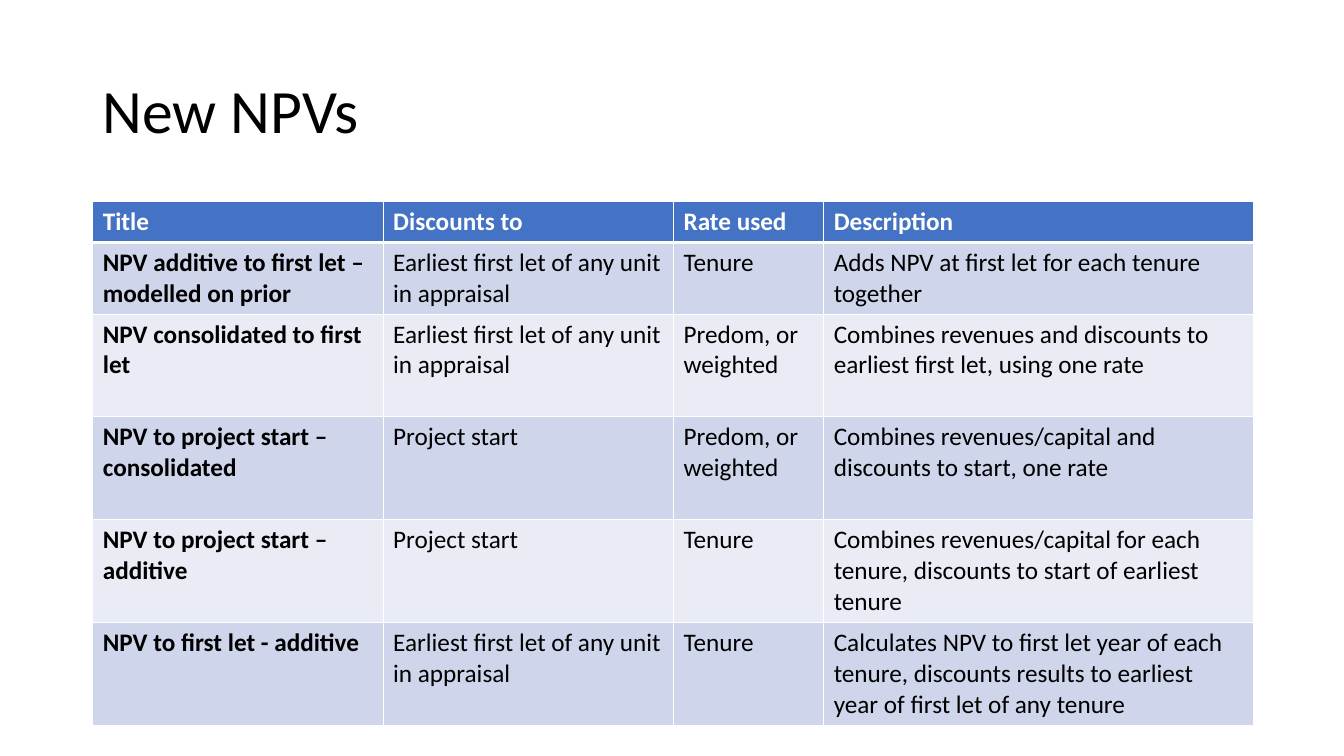
from dataclasses import dataclass

from lxml import etree
from pptx import Presentation
from pptx.dml.color import RGBColor
from pptx.enum.text import MSO_ANCHOR, PP_ALIGN
from pptx.oxml.ns import qn
from pptx.util import Inches, Pt

LEFT = PP_ALIGN.LEFT
MIDDLE = MSO_ANCHOR.MIDDLE
TITLE_ONLY_LAYOUT = 5


@dataclass(frozen=True)
class Theme:
    font: str = "Calibri"
    title_size: int = 44
    table_size: int = 18
    text: str = "000000"
    header_text: str = "FFFFFF"
    header_fill: str = "4472C4"
    band_fills: tuple = ("CFD5EA", "E9EBF5")
    border: str = "FFFFFF"
    border_width: int = 1
    header_rule_width: int = 3


# Table content
COLUMN_WIDTHS = (2.88, 2.88, 1.49, 4.26)
ROW_HEIGHTS = (0.4, 0.71, 1.02, 1.02, 1.02, 1.02)
NPV_ROWS = (
    ("Title", "Discounts to", "Rate used", "Description"),
    ("NPV additive to first let – modelled on prior",
     "Earliest first let of any unit in appraisal",
     "Tenure",
     "Adds NPV at first let for each tenure together"),
    ("NPV consolidated to first let",
     "Earliest first let of any unit in appraisal",
     "Predom, or weighted",
     "Combines revenues and discounts to earliest first let, using one rate"),
    ("NPV to project start – consolidated",
     "Project start",
     "Predom, or weighted",
     "Combines revenues/capital and discounts to start, one rate"),
    ("NPV to project start – additive",
     "Project start",
     "Tenure",
     "Combines revenues/capital for each tenure, discounts to start of earliest tenure"),
    ("NPV to first let - additive",
     "Earliest first let of any unit in appraisal",
     "Tenure",
     "Calculates NPV to first let year of each tenure, discounts results to "
     "earliest year of first let of any tenure"),
)


class SlideBuilder:
    def __init__(self, slide, theme):
        self.slide = slide
        self.theme = theme

    def style_font(self, paragraph, size, color, bold=False):
        font = paragraph.font
        font.name = self.theme.font
        font.size = Pt(size)
        font.bold = bold
        font.color.rgb = RGBColor.from_string(color)

    def add_title(self, text, left, top, width, height):
        title = self.slide.shapes.title
        title.left, title.top = Inches(left), Inches(top)
        title.width, title.height = Inches(width), Inches(height)
        title.text_frame.text = text
        title.text_frame.vertical_anchor = MIDDLE
        paragraph = title.text_frame.paragraphs[0]
        paragraph.alignment = LEFT
        paragraph.line_spacing = 0.9
        self.style_font(paragraph, self.theme.title_size, self.theme.text)

    def add_borders(self, cell, widths):
        properties = cell._tc.get_or_add_tcPr()
        for side, width in widths.items():
            line = etree.SubElement(properties, qn(f"a:ln{side}"), w=str(Pt(width)))
            fill = etree.SubElement(line, qn("a:solidFill"))
            etree.SubElement(fill, qn("a:srgbClr"), val=self.theme.border)

    def format_cell(self, cell, row, column):
        theme = self.theme
        is_header = row == 0
        # Borders come before the fill in the cell properties
        widths = dict.fromkeys("LRTB", theme.border_width)
        if is_header:
            widths["B"] = theme.header_rule_width
        elif row == 1:
            widths["T"] = theme.header_rule_width
        self.add_borders(cell, widths)

        fill = theme.header_fill if is_header else theme.band_fills[(row - 1) % 2]
        cell.fill.solid()
        cell.fill.fore_color.rgb = RGBColor.from_string(fill)
        self.style_font(
            cell.text_frame.paragraphs[0],
            theme.table_size,
            theme.header_text if is_header else theme.text,
            bold=is_header or column == 0,
        )

    def add_table(self, rows, left, top, column_widths, row_heights):
        table = self.slide.shapes.add_table(
            len(rows), len(column_widths), Inches(left), Inches(top),
            Inches(sum(column_widths)), Inches(sum(row_heights)),
        ).table
        for column, width in zip(table.columns, column_widths):
            column.width = Inches(width)
        for row, height in zip(table.rows, row_heights):
            row.height = Inches(height)
        for row_index, texts in enumerate(rows):
            for column_index, text in enumerate(texts):
                cell = table.cell(row_index, column_index)
                cell.text = text
                self.format_cell(cell, row_index, column_index)


def main():
    presentation = Presentation()
    presentation.slide_width = Inches(13.33)
    presentation.slide_height = Inches(7.5)
    layout = presentation.slide_layouts[TITLE_ONLY_LAYOUT]
    builder = SlideBuilder(presentation.slides.add_slide(layout), Theme())

    # Title
    builder.add_title("New NPVs", 0.92, 0.4, 11.5, 1.45)

    # Comparison of NPV measures
    builder.add_table(NPV_ROWS, 0.92, 2, COLUMN_WIDTHS, ROW_HEIGHTS)

    presentation.save("out.pptx")


if __name__ == "__main__":
    main()
